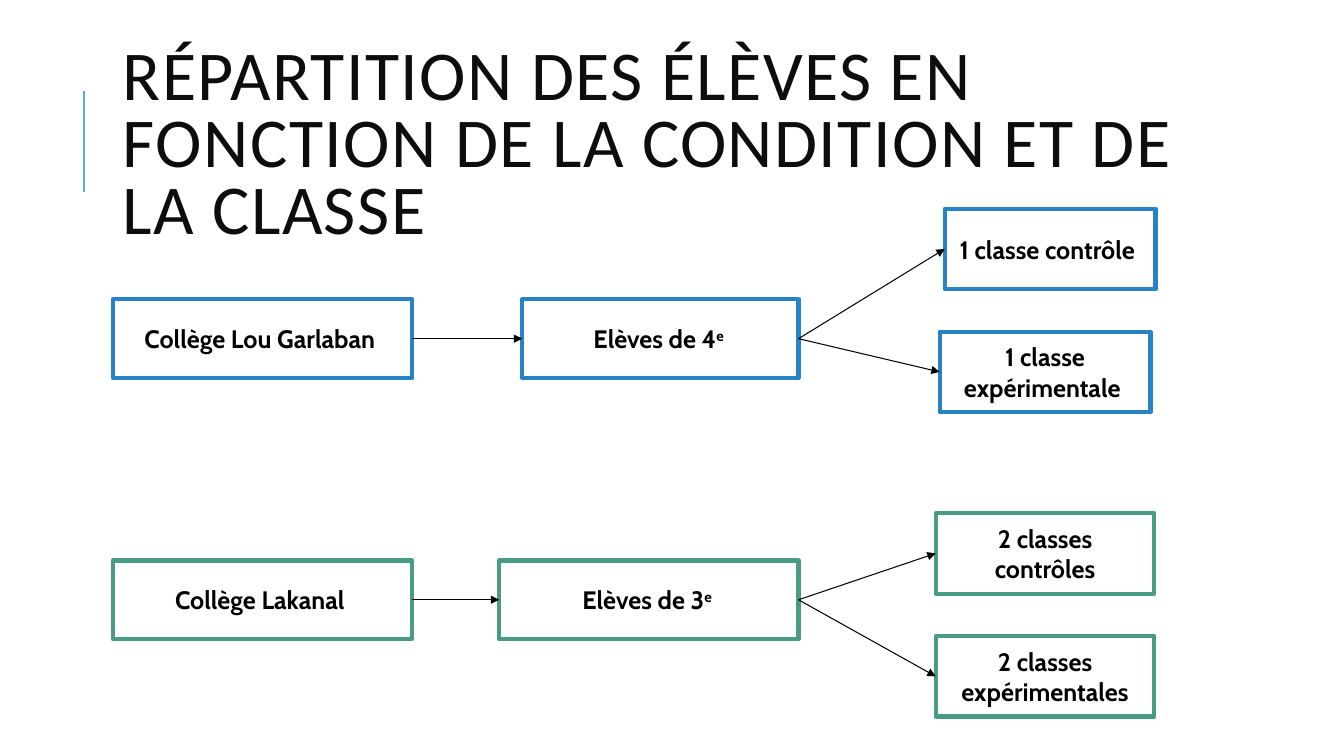
from dataclasses import dataclass

from lxml import etree
from pptx import Presentation
from pptx import util as u
from pptx.dml.color import RGBColor
from pptx.enum import shapes, text
from pptx.oxml.ns import qn
from pptx.shapes.autoshape import Shape
from pptx.shapes.connector import Connector
from pptx.shapes.group import GroupShape
from pptx.slide import Slide

PX = 9144  # EMU per px, 100 px to the inch
LEFT_SITE, RIGHT_SITE = 1, 3
COLORS = {
    "white": "FFFFFF", "black": "000000", "title": "0D0D0D",
    "accent": "58B6C0", "blue": "2683C6", "green": "4A9B83",
}
TITLE = "RÉPARTITION DES ÉLÈVES EN FONCTION DE LA CONDITION ET DE LA CLASSE"


@dataclass
class Box:
    label: str
    left: int
    top: int
    width: int
    height: int
    superscript: str = ""


@dataclass
class Branch:
    """A school, its grade and the classes the grade splits into."""
    color: str
    school: Box
    grade: Box
    classes: list[Box]


BRANCHES = [
    Branch("blue",
           Box("Collège Lou Garlaban ", 112, 297, 297, 78),
           Box("Elèves de 4", 518, 297, 274, 78, "e "),
           [Box("1 classe contrôle ", 937, 207, 209, 80),
            Box("1 classe expérimentale ", 932, 329, 209, 80)]),
    Branch("green",
           Box("Collège Lakanal ", 112, 556, 297, 78),
           Box("Elèves de 3", 495, 556, 297, 78, "e "),
           [Box("2 classes contrôles", 928, 509, 217, 80),
            Box("2 classes expérimentales", 928, 631, 217, 80)]),
]


def px(length: int) -> u.Emu:
    return u.Emu(length * PX)


def rgb(name: str) -> RGBColor:
    return RGBColor.from_string(COLORS[name])


def add_span(para, wording: str, font: str, size: int, color: str, bold: bool = False):
    span = para.add_run()
    span.text = wording
    span.font.name = font
    span.font.size = u.Pt(size)
    span.font.bold = bold
    span.font.color.rgb = rgb(color)
    return span


def style_line(line: Connector, color: str, width: float) -> None:
    line.line.color.rgb = rgb(color)
    line.line.width = u.Pt(width)
    etree.SubElement(line._element.spPr, qn("a:effectLst"))


def add_title(page: Slide) -> None:
    box = page.shapes.add_textbox(px(112), px(64), px(1063), px(164))
    frame = box.text_frame
    frame.word_wrap = True
    frame.vertical_anchor = text.MSO_ANCHOR.MIDDLE
    para = frame.paragraphs[0]
    para.line_spacing = 0.8
    span = add_span(para, TITLE, "Calibri", 50, "title")
    span._r.get_or_add_rPr().set("spc", "100")


def add_box(group: GroupShape, box: Box, color: str) -> Shape:
    shape = group.shapes.add_shape(
        shapes.MSO_SHAPE.RECTANGLE,
        px(box.left), px(box.top), px(box.width), px(box.height))
    shape.shadow.inherit = False
    shape.fill.solid()
    shape.fill.fore_color.rgb = rgb("white")
    shape.line.color.rgb = rgb(color)
    shape.line.width = u.Pt(3)
    frame = shape.text_frame
    frame.word_wrap = True
    frame.vertical_anchor = text.MSO_ANCHOR.MIDDLE
    para = frame.paragraphs[0]
    para.alignment = text.PP_ALIGN.CENTER
    add_span(para, box.label, "Cabin", 18, "black", True)
    if box.superscript:
        span = add_span(para, box.superscript, "Cabin", 18, "black", True)
        span._r.get_or_add_rPr().set("baseline", "30000")
    return shape


def add_arrow(group: GroupShape, source: Shape, target: Shape) -> None:
    arrow = group.shapes.add_connector(shapes.MSO_CONNECTOR.STRAIGHT, 0, 0, 0, 0)
    arrow.begin_connect(source, RIGHT_SITE)
    arrow.end_connect(target, LEFT_SITE)
    style_line(arrow, "black", 0.75)
    etree.SubElement(arrow.line._get_or_add_ln(), qn("a:tailEnd"), type="triangle")


def add_branch(page: Slide, branch: Branch) -> None:
    group = page.shapes.add_group_shape()
    school = add_box(group, branch.school, branch.color)
    grade = add_box(group, branch.grade, branch.color)
    classes = [add_box(group, box, branch.color) for box in branch.classes]
    add_arrow(group, school, grade)
    for target in classes:
        add_arrow(group, grade, target)
    # Refit the group once the arrows have reached their ends
    group._element.recalculate_extents()


def main() -> None:
    deck = Presentation()
    deck.slide_width, deck.slide_height = px(1333), px(750)
    page = deck.slides.add_slide(deck.slide_layouts[6])

    # Title with its accent rule
    rule = page.shapes.add_connector(
        shapes.MSO_CONNECTOR.STRAIGHT, px(83), px(190), px(83), px(90))
    style_line(rule, "accent", 1.5)
    add_title(page)

    # One flow per school
    for branch in BRANCHES:
        add_branch(page, branch)

    deck.save("out.pptx")


if __name__ == "__main__":
    main()
